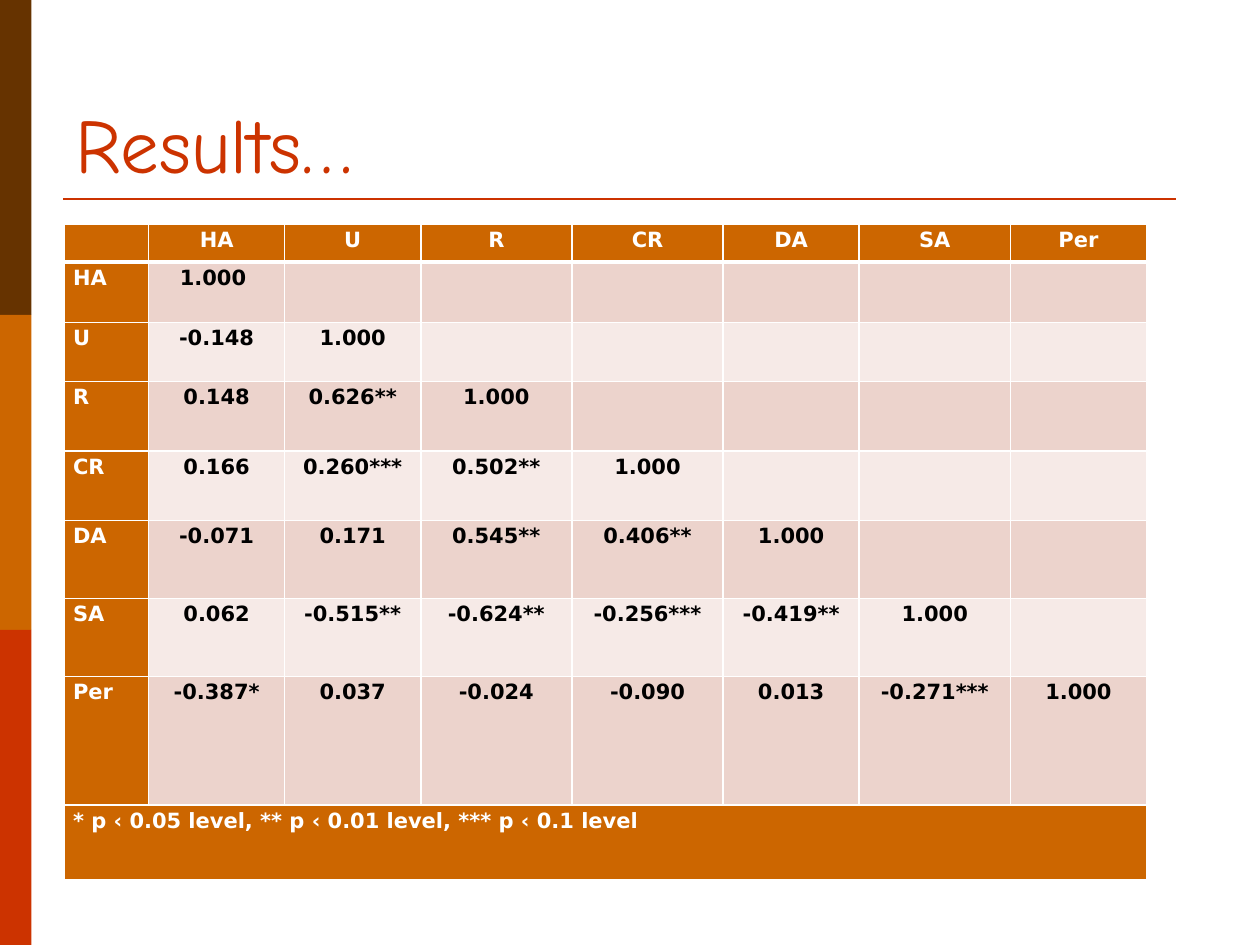
from dataclasses import dataclass

from lxml import etree
from pptx import Presentation
from pptx.dml.color import RGBColor
from pptx.enum.shapes import MSO_CONNECTOR, MSO_SHAPE
from pptx.enum.text import MSO_ANCHOR, PP_ALIGN
from pptx.oxml.ns import qn
from pptx.util import Inches, Pt

RECT = MSO_SHAPE.RECTANGLE
LINE = MSO_CONNECTOR.STRAIGHT
BOTTOM = MSO_ANCHOR.BOTTOM
LEFT, CENTER = PP_ALIGN.LEFT, PP_ALIGN.CENTER

WIDE, HIGH = 10, 7.5
COLORS = {
    "brown": "663300", "orange": "CC6600", "red": "CC3300",
    "odd": "ECD3CC", "even": "F6EAE7", "white": "FFFFFF", "black": "000000",
}
NAMES = ["HA", "U", "R", "CR", "DA", "SA", "Per"]
VALUES = [
    ["1.000 "],
    ["-0.148", "1.000"],
    ["0.148", "0.626**", "1.000"],
    ["0.166", "0.260***", "0.502**", "1.000"],
    ["-0.071", "0.171", "0.545**", "0.406**", "1.000"],
    ["0.062", "-0.515**", "-0.624**", "-0.256***", "-0.419**", "1.000"],
    ["-0.387*", "0.037", "-0.024", "-0.090", "0.013", "-0.271***", "1.000"],
]
NOTE = "* p ‹ 0.05 level, ** p ‹ 0.01 level, *** p ‹ 0.1 level"
COLS = [0.67, 1.08, 1.08, 1.2, 1.2, 1.08, 1.2, 1.08]
ROWS = [0.3, 0.48, 0.47, 0.55, 0.55, 0.62, 0.62, 1.02, 0.59]


@dataclass
class Style:
    fill: str
    ink: str
    align: PP_ALIGN
    top: float = 1
    base: float = 1


def rgb(name: str) -> RGBColor:
    return RGBColor.from_string(COLORS[name])


def add_bands(slide) -> None:
    """Stack three equal colour bands down the left edge."""
    names = ["brown", "orange", "red"]
    step = HIGH / len(names)
    for i, name in enumerate(names):
        band = slide.shapes.add_shape(
            RECT, 0, Inches(i * step), Inches(WIDE / 40), Inches(step))
        band.shadow.inherit = False
        band.fill.solid()
        band.fill.fore_color.rgb = rgb(name)
        band.line.fill.background()


def add_rule(slide) -> None:
    y = Inches(1.58)
    rule = slide.shapes.add_connector(LINE, Inches(0.5), y, Inches(9.33), y)
    rule.line.color.rgb = rgb("red")
    rule.line.width = Pt(1.5)
    etree.SubElement(rule._element.spPr, qn("a:effectLst"))


def set_title(slide) -> None:
    title = slide.shapes.title
    title.left, title.top = Inches(0.5), Inches(0.3)
    title.width, title.height = Inches(9), Inches(1.25)
    frame = title.text_frame
    frame.text = "Results…"
    frame.vertical_anchor = BOTTOM
    para = frame.paragraphs[0]
    para.alignment = LEFT
    font = para.runs[0].font
    font.name, font.size = "Comic Neue", Pt(44)
    font.color.rgb = rgb("red")


def set_edges(cell, style: Style) -> None:
    """Draw white borders; the top and bottom widths come from the style."""
    props = cell._tc.get_or_add_tcPr()
    for side, width in zip("LRTB", (1, 1, style.top, style.base)):
        edge = etree.SubElement(props, qn(f"a:ln{side}"), w=str(Pt(width)))
        fill = etree.SubElement(edge, qn("a:solidFill"))
        etree.SubElement(fill, qn("a:srgbClr"), val=COLORS["white"])


def set_cell(cell, text: str, style: Style) -> None:
    set_edges(cell, style)
    cell.fill.solid()
    cell.fill.fore_color.rgb = rgb(style.fill)
    cell.margin_left = cell.margin_right = Inches(0.07)
    cell.margin_top = cell.margin_bottom = 0
    para = cell.text_frame.paragraphs[0]
    if not text:
        etree.SubElement(para._p, qn("a:endParaRPr"), sz="1200")
        return
    para.text = text
    para.alignment = style.align
    para.line_spacing = 1.15
    para.space_after = Pt(10)
    font = para.runs[0].font
    font.name, font.size, font.bold = "DejaVu Sans", Pt(12), True
    font.color.rgb = rgb(style.ink)


def add_grid(slide) -> None:
    frame = slide.shapes.add_table(
        len(ROWS), len(COLS), Inches(0.51), Inches(1.78),
        Inches(sum(COLS)), Inches(sum(ROWS)))
    table = frame.table
    for col, width in zip(table.columns, COLS):
        col.width = Inches(width)
    for row, height in zip(table.rows, ROWS):
        row.height = Inches(height)

    head = Style("orange", "white", CENTER, base=3)
    for c, name in enumerate(["", *NAMES]):
        set_cell(table.cell(0, c), name, head)

    for r, (name, vals) in enumerate(zip(NAMES, VALUES), 1):
        top = 3 if r == 1 else 1
        set_cell(table.cell(r, 0), name, Style("orange", "white", LEFT, top))
        body = Style("odd" if r % 2 else "even", "black", CENTER, top)
        for c in range(1, len(COLS)):
            text = vals[c - 1] if c <= len(vals) else ""
            set_cell(table.cell(r, c), text, body)

    last = len(ROWS) - 1
    foot = table.cell(last, 0)
    foot.merge(table.cell(last, len(COLS) - 1))
    set_cell(foot, NOTE, Style("orange", "white", LEFT))


def main() -> None:
    deck = Presentation()
    deck.slide_width, deck.slide_height = Inches(WIDE), Inches(HIGH)
    slide = deck.slides.add_slide(deck.slide_layouts[5])
    add_bands(slide)
    add_rule(slide)
    set_title(slide)
    add_grid(slide)
    deck.save("out.pptx")


if __name__ == "__main__":
    main()
